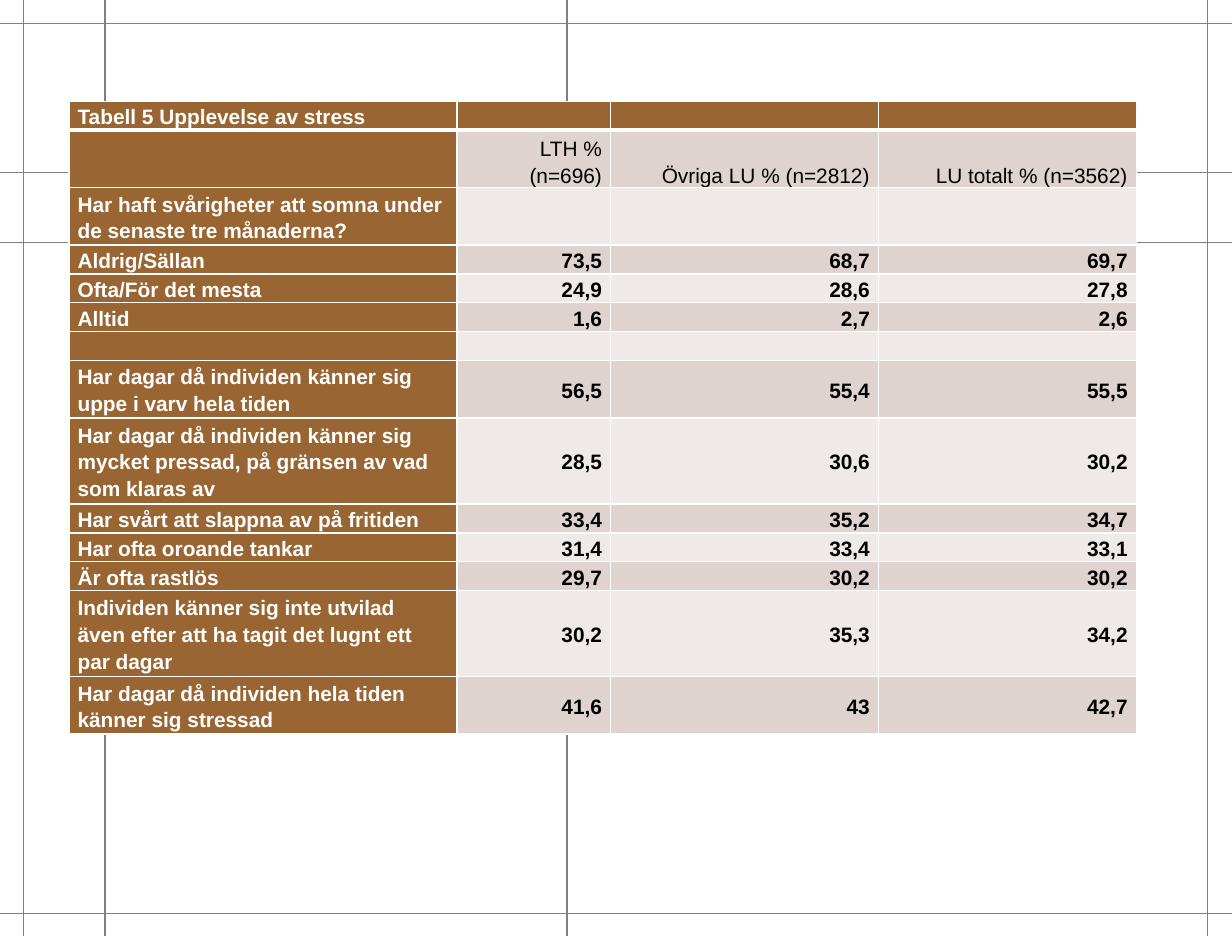
from lxml import etree
from pptx import Presentation
from pptx.dml.color import RGBColor
from pptx.enum import shapes, text
from pptx.oxml.ns import qn
from pptx.util import Emu, Inches, Pt

WHITE = RGBColor(0xFF, 0xFF, 0xFF)
BLACK = RGBColor(0x00, 0x00, 0x00)
GREY = RGBColor(0x80, 0x80, 0x80)
BROWN = RGBColor(0x99, 0x66, 0x33)
DARK_BAND = RGBColor(0xDE, 0xD3, 0xCE)
LIGHT_BAND = RGBColor(0xEF, 0xEA, 0xE8)

SLIDE_SIZE = Emu(9001125), Emu(6840538)
GUIDES_ACROSS = [0.19, 1.38, 1.94, 7.3]
GUIDES_DOWN = [0.19, 0.84, 4.53, 9.65]
GUIDE_LEFT, GUIDE_RIGHT = -0.13, 9.96
GUIDE_TOP, GUIDE_BOTTOM = -0.07, 7.57
COLUMN_WIDTHS = [3.1, 1.23, 2.14, 2.06]
LINE_HEIGHT = 0.23

# Each row: number of text lines, then the cells
ROWS = [
    (1, "Tabell 5 Upplevelse av stress", "", "", ""),
    (2, "", "LTH % (n=696)", "Övriga LU % (n=2812)", "LU totalt % (n=3562)"),
    (2, "Har haft svårigheter att somna under de senaste tre månaderna?", "", "", ""),
    (1, "Aldrig/Sällan", "73,5", "68,7", "69,7"),
    (1, "Ofta/För det mesta", "24,9", "28,6", "27,8"),
    (1, "Alltid", "1,6", "2,7", "2,6"),
    (1, "", "", "", ""),
    (2, "Har dagar då individen känner sig uppe i varv hela tiden", "56,5", "55,4", "55,5"),
    (3, "Har dagar då individen känner sig mycket pressad, på gränsen av vad som klaras av",
     "28,5", "30,6", "30,2"),
    (1, "Har svårt att slappna av på fritiden", "33,4", "35,2", "34,7"),
    (1, "Har ofta oroande tankar", "31,4", "33,4", "33,1"),
    (1, "Är ofta rastlös", "29,7", "30,2", "30,2"),
    (3, "Individen känner sig inte utvilad även efter att ha tagit det lugnt ett par dagar",
     "30,2", "35,3", "34,2"),
    (2, "Har dagar då individen hela tiden känner sig stressad", "41,6", "43", "42,7"),
]


def add_guide(slide, x1, y1, x2, y2):
    line = slide.shapes.add_connector(
        shapes.MSO_CONNECTOR.STRAIGHT, Inches(x1), Inches(y1), Inches(x2), Inches(y2))
    line.line.color.rgb = GREY
    line.line.width = Pt(0.75)
    etree.SubElement(line._element.spPr, qn("a:effectLst"))


def set_borders(cell, top=1, bottom=1):
    """Give the cell white borders; must run before the cell is filled."""
    tcPr = cell._tc.get_or_add_tcPr()
    for side, width in (("L", 1), ("R", 1), ("T", top), ("B", bottom)):
        ln = etree.SubElement(tcPr, qn(f"a:ln{side}"), w=str(int(Pt(width))))
        fill = etree.SubElement(ln, qn("a:solidFill"))
        etree.SubElement(fill, qn("a:srgbClr"), val=str(WHITE))


def write(cell, words, size=12, color=BLACK, bold=True,
          align=text.PP_ALIGN.LEFT, anchor=text.MSO_ANCHOR.MIDDLE):
    cell.margin_left = cell.margin_right = Inches(0.07)
    cell.margin_top = cell.margin_bottom = 0
    cell.vertical_anchor = anchor
    p = cell.text_frame.paragraphs[0]
    p.alignment = align
    p.line_spacing = 1.15
    if not words:
        # The end mark sets the line height of an empty cell
        etree.SubElement(p._p, qn("a:endParaRPr"), sz=str(size * 100))
        return
    r = p.add_run()
    r.text = words
    r.font.name = "Arial"
    r.font.size = Pt(size)
    r.font.bold = bold
    r.font.color.rgb = color


def style_cell(cell, words, row, col):
    set_borders(cell, top=3 if row == 1 else 1, bottom=3 if row == 0 else 1)
    cell.fill.solid()
    if row == 0 or col == 0:
        cell.fill.fore_color.rgb = BROWN
        write(cell, words, color=WHITE)
        return
    cell.fill.fore_color.rgb = DARK_BAND if row % 2 else LIGHT_BAND
    heading = row == 1
    write(cell, words, bold=not heading, align=text.PP_ALIGN.RIGHT,
          anchor=text.MSO_ANCHOR.BOTTOM if heading else text.MSO_ANCHOR.MIDDLE)


def add_stress_table(slide):
    height = LINE_HEIGHT * sum(row[0] for row in ROWS)
    table = slide.shapes.add_table(
        len(ROWS), len(COLUMN_WIDTHS), Inches(0.55), Inches(0.81),
        Inches(sum(COLUMN_WIDTHS)), Inches(height)).table
    for column, width in zip(table.columns, COLUMN_WIDTHS):
        column.width = Inches(width)
    for i, (lines, *cells) in enumerate(ROWS):
        table.rows[i].height = Inches(LINE_HEIGHT * lines)
        for j, words in enumerate(cells):
            style_cell(table.cell(i, j), words, i, j)


def main():
    prs = Presentation()
    prs.slide_width, prs.slide_height = SLIDE_SIZE
    slide = prs.slides.add_slide(prs.slide_layouts[6])
    for y in GUIDES_ACROSS:
        add_guide(slide, GUIDE_LEFT, y, GUIDE_RIGHT, y)
    for x in GUIDES_DOWN:
        add_guide(slide, x, GUIDE_TOP, x, GUIDE_BOTTOM)
    add_stress_table(slide)
    prs.save("out.pptx")


if __name__ == "__main__":
    main()
